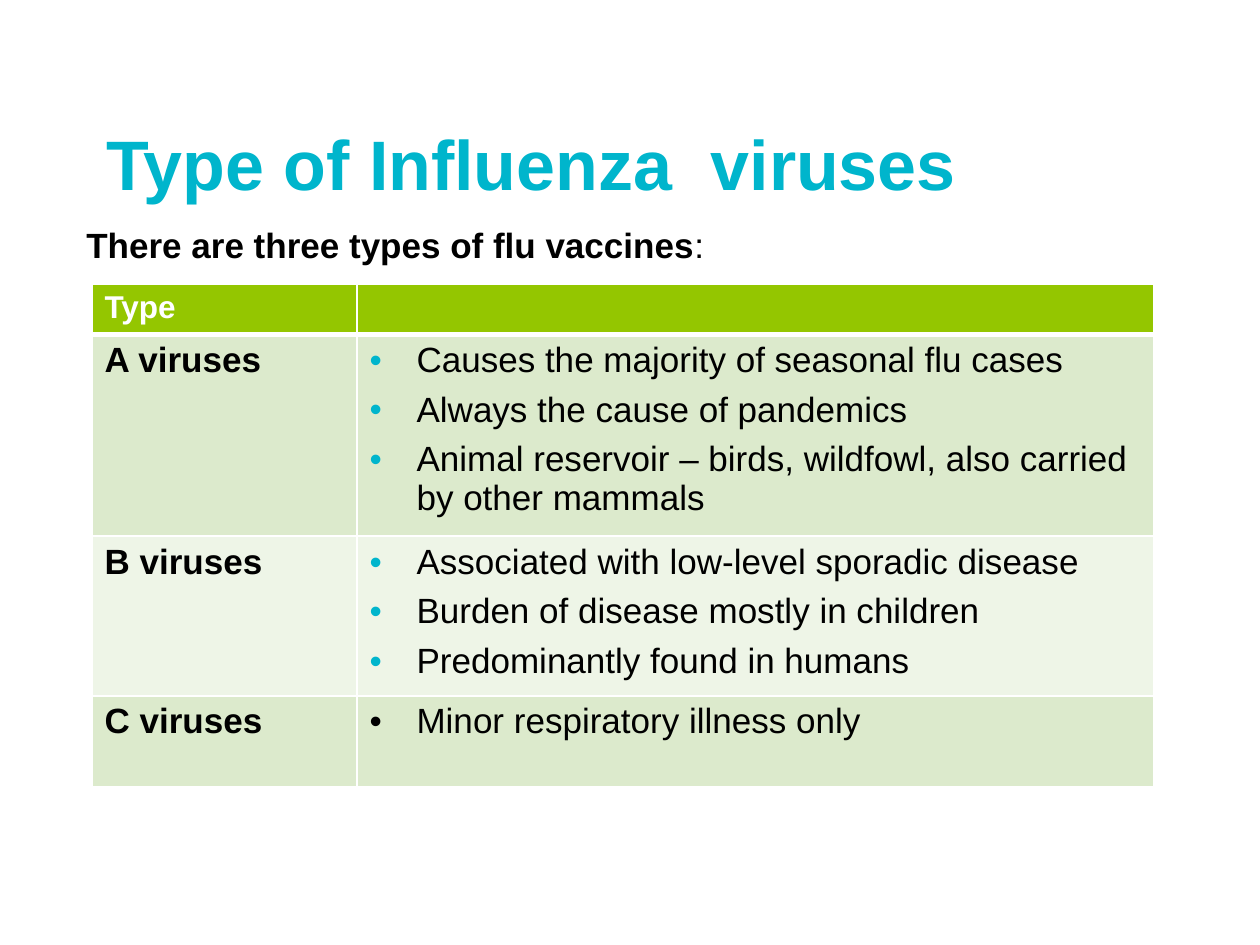
"""Build a slide with a table of the influenza virus types."""
from dataclasses import dataclass

from lxml import etree
from pptx import Presentation
from pptx.dml.color import RGBColor
from pptx.enum.text import MSO_ANCHOR
from pptx.oxml.ns import qn
from pptx.util import Pt

MIDDLE = MSO_ANCHOR.MIDDLE
PX = 914400 // 126


@dataclass(frozen=True)
class Theme:
    font: str = "Arial"
    accent: str = "00B5CC"
    header: str = "94C600"
    bands: tuple = ("DCEACC", "EEF5E7")
    text: str = "000000"
    white: str = "FFFFFF"
    title_size: int = 40
    header_size: int = 18
    body_size: int = 20


THEME = Theme()
TITLE = "Type of Influenza  viruses"
INTRO = ("There are three types of flu vaccines", ":")
HEADER = "Type"
VIRUSES = [
    ("A viruses", THEME.accent, [
        "Causes the majority of seasonal flu cases",
        "Always the cause of pandemics",
        "Animal reservoir – birds, wildfowl, also carried by other mammals",
    ]),
    ("B viruses", THEME.accent, [
        "Associated with low-level sporadic disease",
        "Burden of disease mostly in children",
        "Predominantly found in humans",
    ]),
    ("C viruses", THEME.text, ["Minor respiratory illness only"]),
]
TITLE_BOX = (94, 84, 1113, 158)
INTRO_BOX = (74, 217, 655, 55)
TABLE_ORIGIN = (92, 284)
COLUMN_WIDTHS = (265, 797)
ROW_HEIGHTS = (47, 190, 150, 91)
BULLET_INDENT = 47


def emu(*lengths):
    return [length * PX for length in lengths]


def style(target, size, color, bold=False):
    font = target.font
    font.name, font.size, font.bold = THEME.font, Pt(size), bold
    font.color.rgb = RGBColor.from_string(color)


def add_textbox(slide, box, wrap):
    frame = slide.shapes.add_textbox(*emu(*box)).text_frame
    frame.word_wrap = wrap
    return frame


def add_bullet(paragraph, color):
    props = paragraph._p.get_or_add_pPr()
    indent = BULLET_INDENT * PX
    props.set("marL", str(indent))
    props.set("indent", str(-indent))
    bullet_color = etree.SubElement(props, qn("a:buClr"))
    etree.SubElement(bullet_color, qn("a:srgbClr"), val=color)
    etree.SubElement(props, qn("a:buFont"), typeface=THEME.font)
    etree.SubElement(props, qn("a:buChar"), char="•")


def paint_cell(cell, color, top=1, bottom=1):
    props = cell._tc.get_or_add_tcPr()
    for side, points in (("L", 1), ("R", 1), ("T", top), ("B", bottom)):
        line = etree.SubElement(props, qn(f"a:ln{side}"), w=str(Pt(points)))
        fill = etree.SubElement(line, qn("a:solidFill"))
        etree.SubElement(fill, qn("a:srgbClr"), val=THEME.white)
    cell.fill.solid()
    cell.fill.fore_color.rgb = RGBColor.from_string(color)


def write_label(cell, label, size, color):
    paragraph = cell.text_frame.paragraphs[0]
    paragraph.text = label
    style(paragraph, size, color, bold=True)


def write_facts(cell, facts, bullet_color):
    frame = cell.text_frame
    for index, fact in enumerate(facts):
        paragraph = frame.add_paragraph() if index else frame.paragraphs[0]
        paragraph.text = fact
        add_bullet(paragraph, bullet_color)
        if len(facts) > 1:
            paragraph.space_after = Pt(6)
        style(paragraph, THEME.body_size, THEME.text)


def add_virus_table(slide):
    size = (sum(COLUMN_WIDTHS), sum(ROW_HEIGHTS))
    table = slide.shapes.add_table(
        len(ROW_HEIGHTS), len(COLUMN_WIDTHS), *emu(*TABLE_ORIGIN, *size)).table
    for column, width in zip(table.columns, emu(*COLUMN_WIDTHS)):
        column.width = width
    for row, height in zip(table.rows, emu(*ROW_HEIGHTS)):
        row.height = height

    for cell in table.rows[0].cells:
        paint_cell(cell, THEME.header, bottom=3)
    write_label(table.cell(0, 0), HEADER, THEME.header_size, THEME.white)

    for index, (virus, bullet_color, facts) in enumerate(VIRUSES):
        label_cell, facts_cell = table.rows[index + 1].cells
        for cell in (label_cell, facts_cell):
            paint_cell(cell, THEME.bands[index % 2], top=1 if index else 3)
        write_label(label_cell, virus, THEME.body_size, THEME.text)
        write_facts(facts_cell, facts, bullet_color)


def main():
    deck = Presentation()
    deck.slide_width, deck.slide_height = emu(1260, 945)
    slide = deck.slides.add_slide(deck.slide_layouts[6])

    title = add_textbox(slide, TITLE_BOX, wrap=True)
    title.vertical_anchor = MIDDLE
    title.paragraphs[0].text = TITLE
    style(title.paragraphs[0], THEME.title_size, THEME.accent, bold=True)

    add_virus_table(slide)

    intro = add_textbox(slide, INTRO_BOX, wrap=True).paragraphs[0]
    for text, bold in zip(INTRO, (True, False)):
        run = intro.add_run()
        run.text = text
        style(run, THEME.body_size, THEME.text, bold)

    deck.save("out.pptx")


if __name__ == "__main__":
    main()
